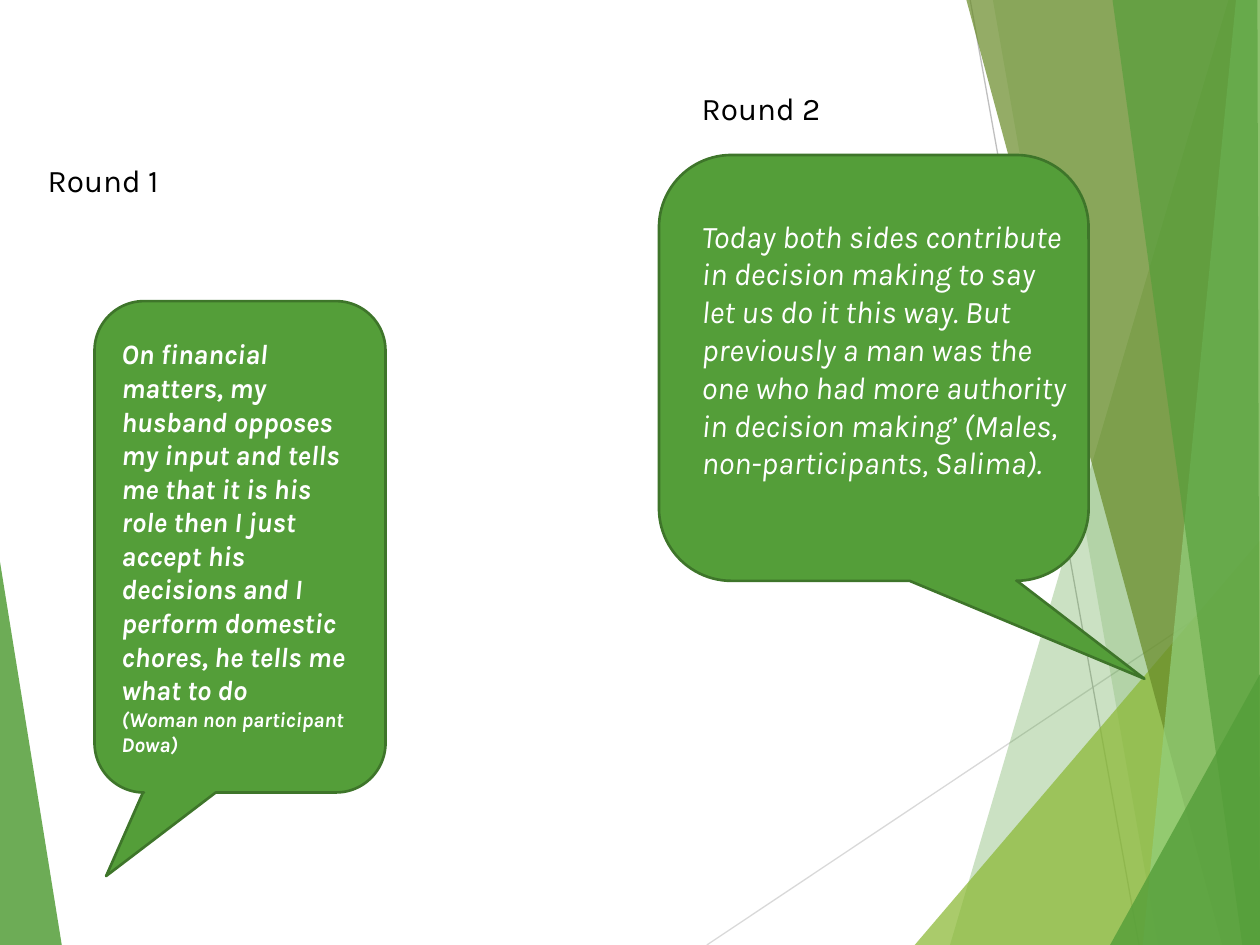
"""Build a slide comparing two quotes in callouts over a faceted green backdrop."""
from dataclasses import dataclass

from lxml.etree import SubElement as Sub
from pptx import Presentation
from pptx.dml.color import RGBColor as Rgb
from pptx.enum.shapes import MSO_CONNECTOR as Link, MSO_SHAPE as Kind
from pptx.enum.text import MSO_ANCHOR as Anchor, PP_ALIGN as Align
from pptx.oxml.ns import qn
from pptx.util import Inches, Pt


@dataclass(frozen=True)
class Theme:
    font: str = "Karla"
    green: str = "549E39"
    edge: str = "3E752A"
    lime: str = "8AB833"
    olive: str = "678A26"
    mint: str = "93D07D"
    pale: str = "D9D9D9"
    gray: str = "BFBFBF"
    ink: str = "000000"
    white: str = "FFFFFF"
    head: int = 18
    body: int = 16
    note: int = 12
    thin: float = 0.75
    rim: float = 1.5


T = Theme()
COLS, ROWS = 100, 75

LEFT = ([(0, 44.6), (4.9, ROWS), (0, ROWS)], T.green, 85)
RAYS = [
    ((56.1, ROWS), (COLS, 45.7), T.pale),
    ((77, 0), (90.4, ROWS), T.gray),
]
RIGHT = [
    ([(97.5, 0), (75.4, ROWS), (COLS, ROWS), (COLS, 0)], T.green, 30),
    ([(78.8, 0), (91.9, ROWS), (COLS, ROWS), (COLS, 0)], T.green, 20),
    ([(72.6, ROWS), (COLS, 42.9), (COLS, ROWS)], T.lime, 72),
    ([(76.7, 0), (97, ROWS), (COLS, ROWS), (COLS, 0)], T.olive, 70),
    ([(98.1, 0), (90.7, ROWS), (COLS, ROWS), (COLS, 0)], T.mint, 70),
    ([(88.3, 0), (98.6, ROWS), (COLS, ROWS), (99.8, 0)], T.green, 65),
    ([(88.1, ROWS), (COLS, 53.5), (COLS, ROWS)], T.green, 80),
]

QUOTE = [
    ("On financial matters, my husband opposes my input and tells me that it is "
     "his role then I just accept his decisions and I perform domestic chores, "
     "he tells me what to do", T.body),
    ("(Woman non participant Dowa)", T.note),
]
REPLY = [
    ("Today both sides contribute in decision making to say let us do it this way. "
     "But previously a man was the one who had more authority in decision making’ "
     "(Males, non-participants, Salima).", T.head),
]
CALLS = [
    ((7.5, 23.9, 23.1, 39), (-0.46, 0.67, 0.17), QUOTE),
    ((52.3, 12.3, 34.1, 33.8), (0.63, 0.73, 0.17), []),
]
NOTES = [
    ((2.8, 12.3, 21.4, 4), [("Round 1", T.head)], T.ink, False),
    ((54.7, 16.7, 31, 22.2), REPLY, T.white, True),
    ((54.7, 6.6, 21.4, 4), [("Round 2", T.head)], T.ink, False),
]

deck = Presentation()
deck.slide_width, deck.slide_height = Inches(10), Inches(7.5)
slide = deck.slides.add_slide(deck.slide_layouts[6])
shapes = slide.shapes


def place(*units):
    steps = (deck.slide_width / COLS, deck.slide_height / ROWS)
    return [round(n * steps[i % 2]) for i, n in enumerate(units)]


def paint(shape, tint):
    shape.shadow.inherit = False
    shape.fill.solid()
    shape.fill.fore_color.rgb = Rgb.from_string(tint)


def add_facet(points, tint, share):
    first, *rest = [place(*p) for p in points]
    path = shapes.build_freeform(*first)
    path.add_line_segments(rest, close=True)
    facet = path.convert_to_shape()
    paint(facet, tint)
    facet.line.fill.background()
    color = facet.fill._xPr.find(qn("a:solidFill"))[0]
    Sub(color, qn("a:alpha"), val=str(share * 1000))


def add_ray(start, end, tint):
    ray = shapes.add_connector(Link.STRAIGHT, *place(*start, *end))
    ray.line.color.rgb = Rgb.from_string(tint)
    ray.line.width = Pt(T.thin)
    Sub(ray._element.spPr, qn("a:effectLst"))


def write(frame, lines, tint, bold=False, italic=False):
    frame.word_wrap = True
    for i, (text, size) in enumerate(lines):
        para = frame.paragraphs[0] if i == 0 else frame.add_paragraph()
        para.alignment = Align.LEFT
        run = para.add_run()
        run.text = text
        font = run.font
        font.name, font.size = T.font, Pt(size)
        font.bold, font.italic = bold, italic
        font.color.rgb = Rgb.from_string(tint)


def add_call(box, tail, lines):
    call = shapes.add_shape(Kind.ROUNDED_RECTANGULAR_CALLOUT, *place(*box))
    for i, n in enumerate(tail):
        call.adjustments[i] = n
    paint(call, T.green)
    call.line.color.rgb = Rgb.from_string(T.edge)
    call.line.width = Pt(T.rim)
    call.text_frame.vertical_anchor = Anchor.MIDDLE
    write(call.text_frame, lines, T.white, True, True)


def add_note(box, lines, tint, italic):
    note = shapes.add_textbox(*place(*box))
    write(note.text_frame, lines, tint, italic=italic)


add_facet(*LEFT)
for ray in RAYS:
    add_ray(*ray)
for facet in RIGHT:
    add_facet(*facet)
for call in CALLS:
    add_call(*call)
for note in NOTES:
    add_note(*note)

deck.save("out.pptx")
